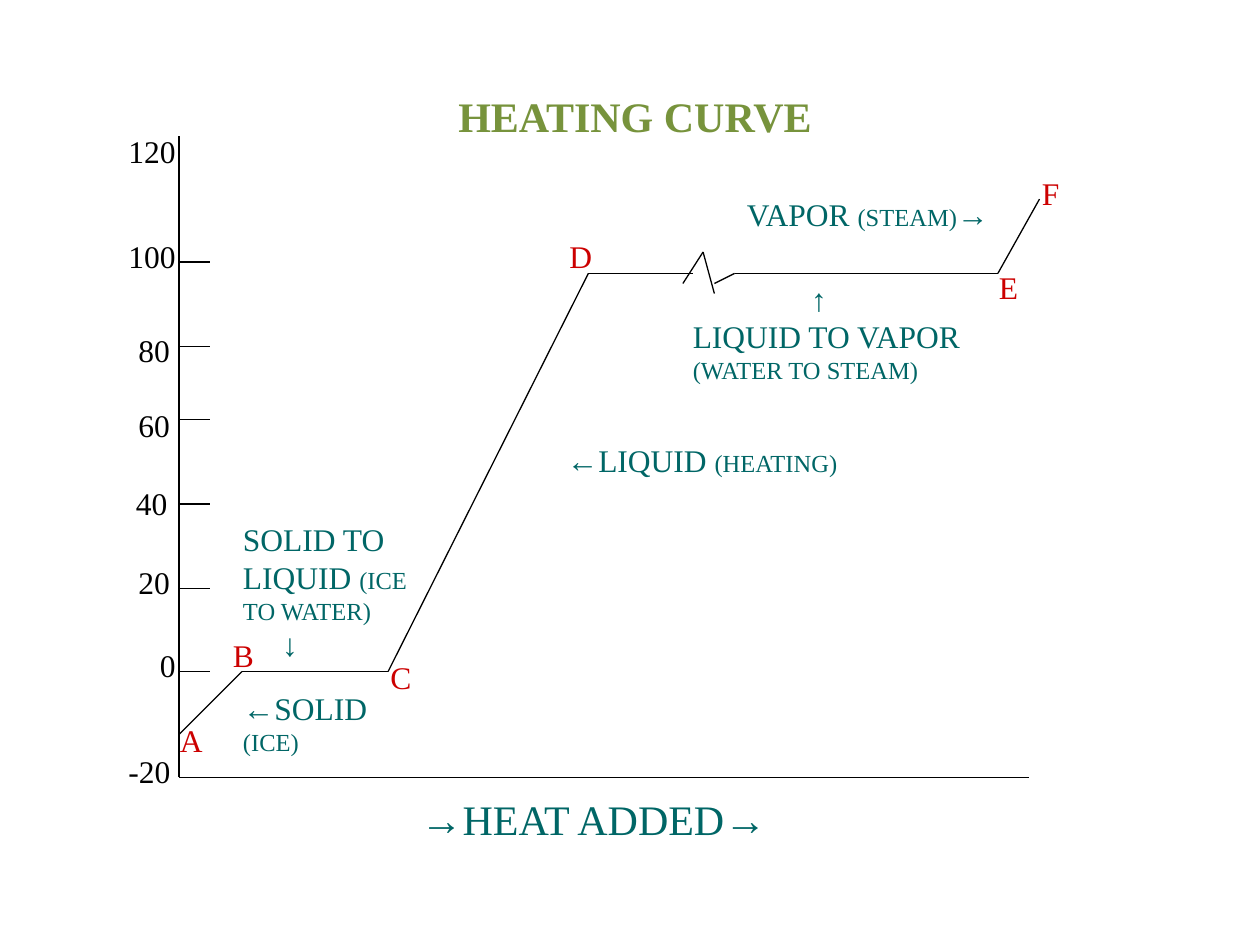
from dataclasses import dataclass
from itertools import pairwise

from pptx import Presentation
from pptx.dml.color import RGBColor as Rgb
from pptx.enum.shapes import MSO_CONNECTOR as Link
from pptx.enum.text import MSO_AUTO_SIZE as Fit, PP_ALIGN as Align
from pptx.oxml.ns import qn
from pptx.util import Inches, Pt


@dataclass(frozen=True)
class Theme:
    font: str = "Times New Roman"
    ink: str = "000000"
    teal: str = "006666"
    red: str = "CC0000"
    green: str = "77933C"
    head: int = 24
    body: int = 18
    small: int = 14
    line: float = 0.75


THEME = Theme()
AXIS = 1.42
BASE = 6.17
TICKS = [2.08, 2.75, 3.33, 4, 4.67, 5.33]
SCALE = [
    ("120", 0.92, 1), ("100", 0.92, 1.83), ("80", 1, 2.58), ("60", 1, 3.17),
    ("40", 0.98, 3.79), ("20", 1, 4.42), ("0", 1.17, 5.08), ("-20", 0.92, 5.92),
]
CURVE = [
    [(AXIS, 5.83), (1.92, 5.33), (3.08, 5.33), (4.67, 2.17), (5.5, 2.17)],
    [(5.42, 2.25), (5.58, 2), (5.67, 2.33)],
    [(5.67, 2.25), (5.83, 2.17), (7.92, 2.17), (8.25, 1.58)],
]
POINTS = [
    ("A", 1.33, 5.67), ("B", 1.75, 5), ("C", 3, 5.17),
    ("D", 4.42, 1.83), ("E", 7.83, 2.08), ("F", 8.17, 1.33),
]
BIG, SMALL = THEME.body, THEME.small
NOTES = [
    ((1.83, 5.42, 1.69, 0.62), [[("←SOLID", BIG)], [("(ICE)", SMALL)]], {}),
    ((1.83, 4.08, 1.68, 1.23), [
        [("SOLID TO", BIG)],
        [("LIQUID ", BIG), ("(ICE", SMALL)],
        [("TO WATER)", SMALL)],
        [("↓", BIG)],
    ], {3: 0.31}),
    ((4.4, 3.45, 2.36, 0.4), [[("←LIQUID ", BIG), ("(HEATING)", SMALL)]], {}),
    ((5.4, 2.17, 2.56, 0.93), [
        [("↑", BIG)],
        [("LIQUID TO VAPOR", BIG)],
        [("(WATER TO STEAM)", SMALL)],
    ], {0: 0.94}),
    ((5.83, 1.5, 2.52, 0.4),
     [[("VAPOR ", BIG), ("(STEAM)", SMALL), ("→", BIG)]], {}),
]


def add_line(slide, start, end):
    line = slide.shapes.add_connector(
        Link.STRAIGHT, *(Inches(v) for v in (*start, *end)))
    line.line.color.rgb = Rgb.from_string(THEME.ink)
    line.line.width = Pt(THEME.line)
    props = line._element.spPr
    props.append(props.makeelement(qn("a:effectLst"), {}))


def add_trace(slide, points):
    for start, end in pairwise(points):
        add_line(slide, start, end)


def add_frame(slide, area):
    frame = slide.shapes.add_textbox(*(Inches(v) for v in area)).text_frame
    frame.word_wrap = True
    frame.auto_size = Fit.SHAPE_TO_FIT_TEXT
    return frame


def style_run(run, size, color, bold=False):
    font = run.font
    font.name = THEME.font
    font.size = Pt(size)
    font.bold = bold
    font.color.rgb = Rgb.from_string(color)


def add_label(slide, text, left, top, color):
    frame = add_frame(slide, (left, top, 0.55, 0.4))
    frame.margin_right = 0
    frame.text = text
    style_run(frame.paragraphs[0].runs[0], THEME.body, color)


def add_title(slide, area, text, color, bold=False):
    frame = add_frame(slide, area)
    frame.text = text
    para = frame.paragraphs[0]
    para.alignment = Align.CENTER
    style_run(para.runs[0], THEME.head, color, bold)


def add_note(slide, area, rows, shifts):
    frame = add_frame(slide, area)
    frame.margin_right = 0
    for index, row in enumerate(rows):
        para = frame.paragraphs[0] if index == 0 else frame.add_paragraph()
        if index in shifts:
            para._p.get_or_add_pPr().set("marL", str(Inches(shifts[index])))
        for text, size in row:
            run = para.add_run()
            run.text = text
            style_run(run, size, THEME.teal)


def main():
    deck = Presentation()
    deck.slide_width, deck.slide_height = Inches(10), Inches(7.5)
    slide = deck.slides.add_slide(deck.slide_layouts[6])
    add_trace(slide, [(AXIS, 1.08), (AXIS, BASE), (8.17, BASE)])
    for level in TICKS:
        add_line(slide, (AXIS, level), (AXIS + 0.25, level))
    for text, left, top in SCALE:
        add_label(slide, text, left, top, THEME.ink)
    add_title(slide, (AXIS, 6.25, 6.58, 0.5), "→HEAT ADDED→", THEME.teal)
    for trace in CURVE:
        add_trace(slide, trace)
    for text, left, top in POINTS:
        add_label(slide, text, left, top, THEME.red)
    add_title(slide, (1.75, 0.67, 6.58, 0.5), "HEATING CURVE", THEME.green, True)
    for area, rows, shifts in NOTES:
        add_note(slide, area, rows, shifts)
    deck.save("out.pptx")


if __name__ == "__main__":
    main()
